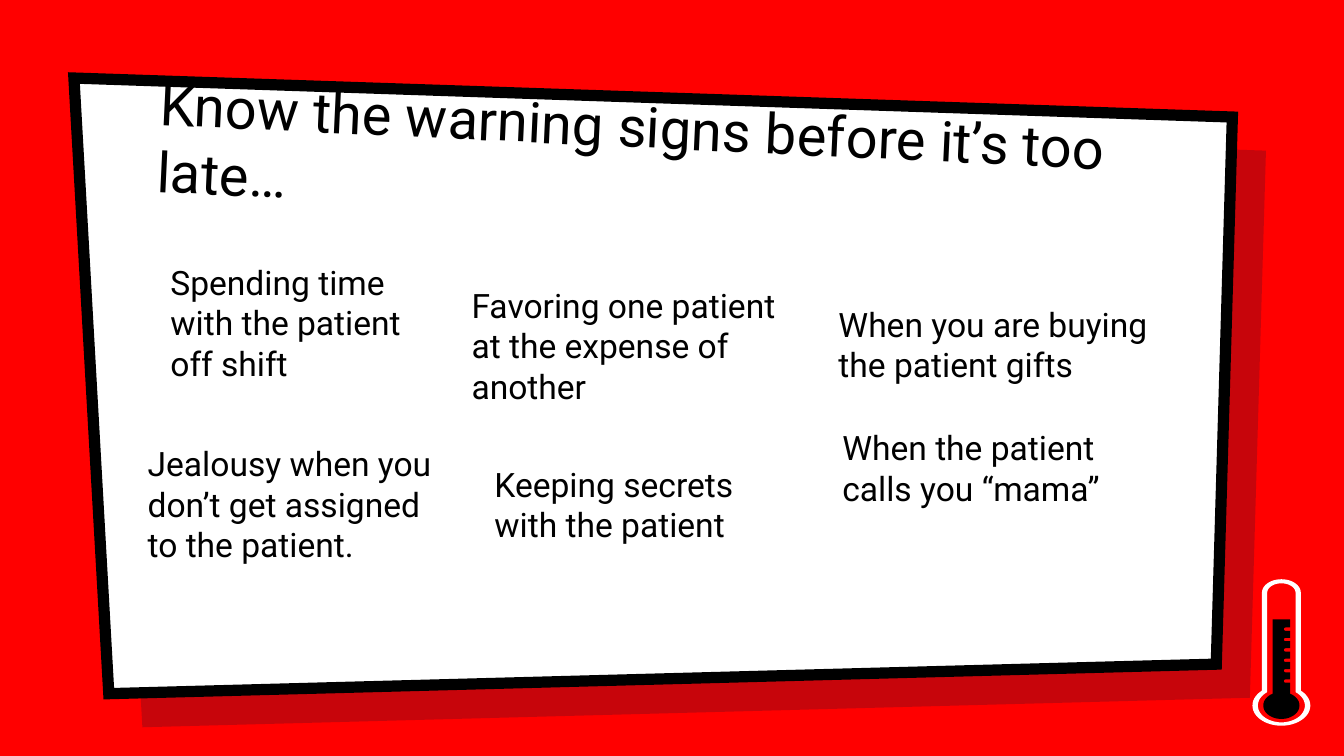
import math
from pptx import Presentation
from pptx.dml.color import RGBColor
from pptx.enum import text
from pptx.oxml import ns
from pptx.util import Pt
from lxml import etree

RED = RGBColor(0xFF, 0x00, 0x00)
WHITE = RGBColor(0xFF, 0xFF, 0xFF)
BLACK = RGBColor(0x00, 0x00, 0x00)
NAVY = RGBColor(0x00, 0x19, 0x36)
FONT = "Roboto"

SIGNS = [
    ("Favoring one patient at the expense of another", (245.5, 145.4, 188.6, 79.9), 7.2),
    ("When you are buying the patient gifts", (442.1, 155.5, 180.7, 51.1), 7.2),
    ("Spending time with the patient off shift", (84.2, 136.8, 149.8, 90), 3.6),
    ("Jealousy when you don’t get assigned to the patient.", (72, 234, 174.2, 72.7), 3.6),
    ("When the patient calls you “mama”", (444.2, 225.4, 167.8, 67.7), 3.6),
    ("Keeping secrets with the patient", (257.8, 244.8, 167.8, 51.1), 3.6),
]


def add_outline(slide, contours, color):
    contours = [[(Pt(x), Pt(y)) for x, y in c] for c in contours]
    builder = slide.shapes.build_freeform(*contours[0][0])
    builder.add_line_segments(contours[0][1:])
    for contour in contours[1:]:
        builder.move_to(*contour[0])
        builder.add_line_segments(contour[1:])
    sp = builder.convert_to_shape()
    sp.shadow.inherit = False
    sp.fill.solid()
    sp.fill.fore_color.rgb = color
    sp.line.fill.background()
    return sp


def add_text(slide, box, words, size, inset, anchor=text.MSO_ANCHOR.TOP):
    sp = slide.shapes.add_textbox(*map(Pt, box))
    tf = sp.text_frame
    tf.word_wrap = True
    tf.vertical_anchor = anchor
    tf.margin_left = tf.margin_right = Pt(7.2)
    tf.margin_top = tf.margin_bottom = Pt(inset)
    p = tf.paragraphs[0]
    p.text = words
    p.font.name = FONT
    p.font.size = Pt(size)
    p.font.color.rgb = BLACK
    return sp


def add_panel(slide, box):
    left, top, width, height = box
    corners = [(0, 0), (width, 20.9), (width - 8.6, height - 15.8), (18.7, height)]

    def quad(offset):
        return [[(left + offset + x, top + offset + y) for x, y in corners]]

    shade = add_outline(slide, quad(18), NAVY)
    color = shade.fill._xPr.find(".//" + ns.qn("a:srgbClr"))
    etree.SubElement(color, ns.qn("a:alpha")).set("val", "22000")

    card = add_outline(slide, quad(0), WHITE)
    card.line.color.rgb = BLACK
    card.line.width = Pt(6)
    ln = card.line._get_or_add_ln()
    etree.SubElement(ln, ns.qn("a:miter")).set("lim", "800000")


def add_title(slide, box):
    sp = add_text(slide, box, "Know the warning signs before it’s too late…",
                  30, 7.2, text.MSO_ANCHOR.BOTTOM)
    sp.rotation = 2.7


def add_signs(slide, signs):
    for words, box, inset in signs:
        add_text(slide, box, words, 18, inset)


def arc(cx, cy, rx, ry, start, end, steps):
    angles = [math.radians(start + (end - start) * i / steps) for i in range(steps + 1)]
    return [(cx + rx * math.cos(a), cy + ry * math.sin(a)) for a in angles]


def add_thermometer(slide, box):
    left, top, width, height = box
    cx = left + width / 2
    bulb_y = top + height - 10.8
    shoulder_y = top + 7.2

    def bulb(half, rx, ry):
        gap = math.degrees(math.acos(half / rx))
        return arc(cx, bulb_y, rx, ry, -gap, 180 + gap, 40)

    def glass(half, cap, rx, ry):
        return arc(cx, shoulder_y, half, cap, 180, 360, 20) + bulb(half, rx, ry)

    add_outline(slide, [glass(10.4, 7.2, width / 2, 10.8),
                        glass(7.6, 5, 12.6, 9)], WHITE)

    half, level = 4.7, top + 21.6
    mercury = [(cx - half, level), (cx + half, level)]
    for i in range(6):
        y = level + 5.2 + 5.56 * i
        mercury.append((cx + half, y - 0.9))
        mercury += arc(cx + 2.2, y, 0.9, 0.9, 270, 90, 6)
        mercury.append((cx + half, y + 0.9))
    add_outline(slide, [mercury + bulb(half, 9.7, 7.2)], BLACK)


def main():
    prs = Presentation()
    prs.slide_width, prs.slide_height = Pt(720), Pt(405)
    slide = prs.slides.add_slide(prs.slide_layouts[6])
    slide.background.fill.solid()
    slide.background.fill.fore_color.rgb = RED
    add_panel(slide, (39.6, 41.8, 620.6, 329.8))
    add_title(slide, (77, 69.1, 553.7, 59.8))
    add_signs(slide, SIGNS)
    add_thermometer(slide, (671, 310.3, 31, 78.5))
    prs.save("out.pptx")


if __name__ == "__main__":
    main()
